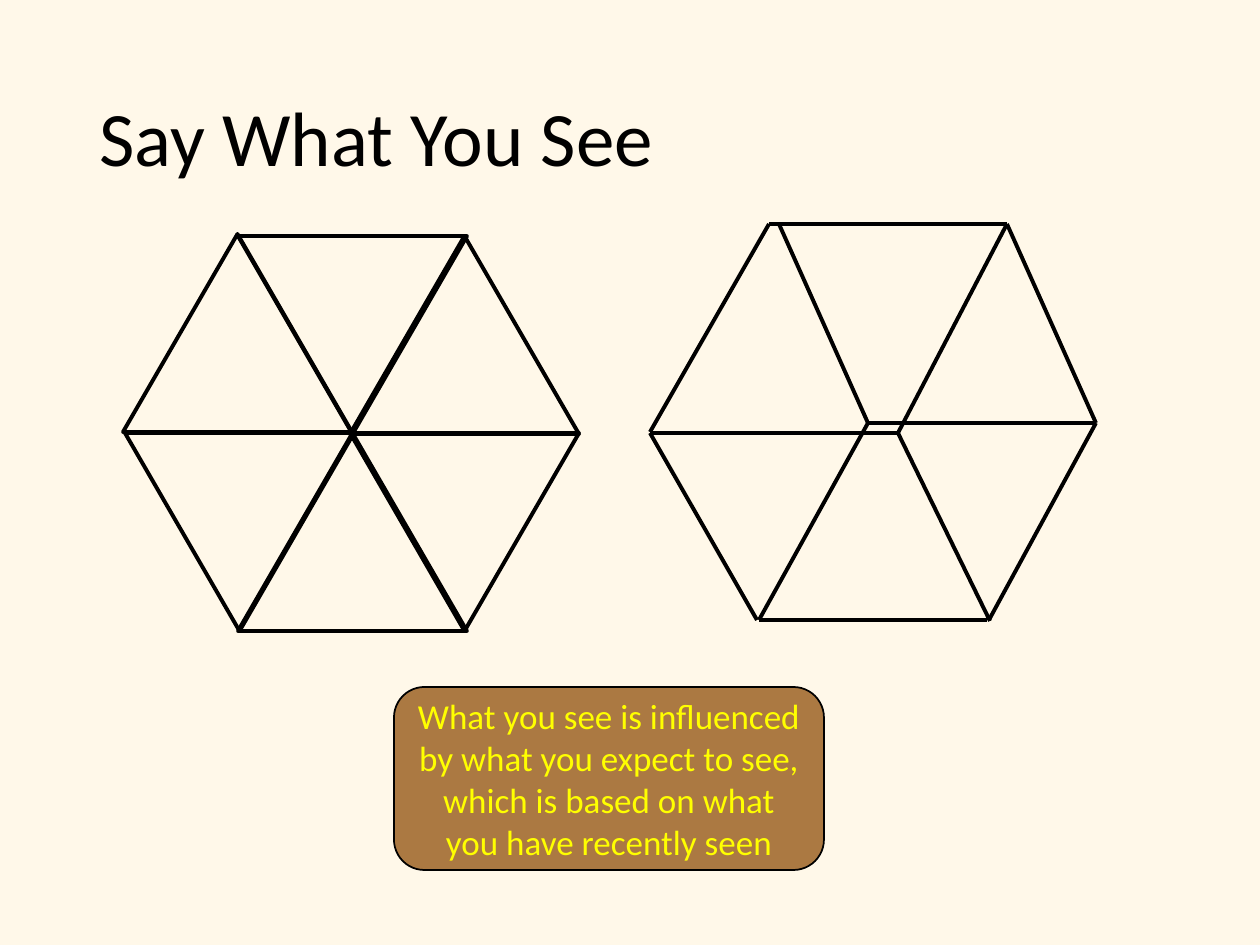
from dataclasses import dataclass
from typing import NamedTuple

from pptx import Presentation
from pptx.dml.color import RGBColor
from pptx.enum.shapes import MSO_CONNECTOR as Connector, MSO_SHAPE as Preset
from pptx.enum.text import MSO_ANCHOR as Anchor, PP_ALIGN as Align
from pptx.oxml.ns import qn
from pptx.shapes.autoshape import Shape
from pptx.shapes.shapetree import GroupShapes
from pptx.util import Emu, Pt
from lxml.etree import SubElement

EMU_PER_PX = 914400 / 126


@dataclass(frozen=True)
class Theme:
    background: RGBColor = RGBColor.from_string("FFF8E9")
    ink: RGBColor = RGBColor.from_string("000000")
    callout: RGBColor = RGBColor.from_string("AB7942")
    callout_text: RGBColor = RGBColor.from_string("FFFF00")
    font: str = "Calibri"
    title_size: Pt = Pt(44)
    callout_size: Pt = Pt(20)
    figure_line: Pt = Pt(2.25)
    callout_line: Pt = Pt(1)


class Box(NamedTuple):
    left: int
    top: int
    width: int
    height: int


class Point(NamedTuple):
    x: int
    y: int


class Triangle(NamedTuple):
    left: int
    top: int
    inverted: bool


class Edge(NamedTuple):
    start: Point
    end: Point


THEME = Theme()
TRIANGLE_WIDTH, TRIANGLE_HEIGHT = 229, 198
TRIANGLES = [
    Triangle(123, 234, False),
    Triangle(350, 236, False),
    Triangle(238, 433, False),
    Triangle(125, 433, True),
    Triangle(238, 236, True),
    Triangle(350, 433, True),
]

TOP_LEFT, TOP_INNER, TOP_RIGHT = Point(769, 224), Point(779, 224), Point(1007, 224)
LEFT, RIGHT = Point(650, 433), Point(1096, 423)
UPPER_CENTER, LOWER_CENTER = Point(868, 423), Point(898, 433)
BOTTOM_LEFT, BOTTOM_RIGHT = Point(759, 620), Point(989, 620)
EDGES = [
    Edge(TOP_RIGHT, RIGHT),
    Edge(LEFT, Point(757, 620)),
    Edge(RIGHT, BOTTOM_RIGHT),
    Edge(UPPER_CENTER, BOTTOM_LEFT),
    Edge(LOWER_CENTER, Point(990, 621)),
    Edge(Point(987, 620), BOTTOM_LEFT),
    Edge(TOP_RIGHT, TOP_LEFT),
    Edge(TOP_LEFT, Point(650, 432)),
    Edge(TOP_INNER, UPPER_CENTER),
    Edge(LOWER_CENTER, LEFT),
    Edge(TOP_RIGHT, LOWER_CENTER),
    Edge(RIGHT, UPPER_CENTER),
]


def px(*lengths: int) -> list[Emu]:
    return [Emu(round(length * EMU_PER_PX)) for length in lengths]


def write(shape: Shape, text: str, size: Pt, color: RGBColor, align: Align, spacing: float) -> None:
    frame = shape.text_frame
    frame.word_wrap = True
    frame.vertical_anchor = Anchor.MIDDLE
    paragraph = frame.paragraphs[0]
    paragraph.text = text
    paragraph.alignment = align
    paragraph.line_spacing = spacing
    paragraph.font.name = THEME.font
    paragraph.font.size = size
    paragraph.font.color.rgb = color


def draw_triangle(shapes: GroupShapes, triangle: Triangle) -> None:
    box = Box(triangle.left, triangle.top, TRIANGLE_WIDTH, TRIANGLE_HEIGHT)
    shape = shapes.add_shape(Preset.ISOSCELES_TRIANGLE, *px(*box))
    shape.shadow.inherit = False
    shape.rotation = 180 if triangle.inverted else 0
    shape.fill.background()
    shape.line.color.rgb = THEME.ink
    shape.line.width = THEME.figure_line


def draw_edge(shapes: GroupShapes, edge: Edge) -> None:
    connector = shapes.add_connector(Connector.STRAIGHT, *px(*edge.start, *edge.end))
    connector.line.color.rgb = THEME.ink
    connector.line.width = THEME.figure_line
    SubElement(connector._element.spPr, qn("a:effectLst"))


def main() -> None:
    presentation = Presentation()
    presentation.slide_width, presentation.slide_height = px(1260, 945)
    slide = presentation.slides.add_slide(presentation.slide_layouts[6])
    slide.background.fill.solid()
    slide.background.fill.fore_color.rgb = THEME.background

    title = slide.shapes.add_textbox(*px(*Box(87, 50, 1086, 183)))
    write(title, "Say What You See", THEME.title_size, THEME.ink, Align.LEFT, 0.9)

    hexagon = slide.shapes.add_group_shape()
    for triangle in TRIANGLES:
        draw_triangle(hexagon.shapes, triangle)

    cube = slide.shapes.add_group_shape()
    for edge in EDGES:
        draw_edge(cube.shapes, edge)

    callout = slide.shapes.add_shape(Preset.ROUNDED_RECTANGLE, *px(*Box(394, 687, 430, 183)))
    callout.shadow.inherit = False
    callout.fill.solid()
    callout.fill.fore_color.rgb = THEME.callout
    callout.line.color.rgb = THEME.ink
    callout.line.width = THEME.callout_line
    message = (
        "What you see is influenced by what you expect to see,\n"
        "which is based on what you have recently seen"
    )
    write(callout, message, THEME.callout_size, THEME.callout_text, Align.CENTER, 1.0)

    presentation.save("out.pptx")


if __name__ == "__main__":
    main()
